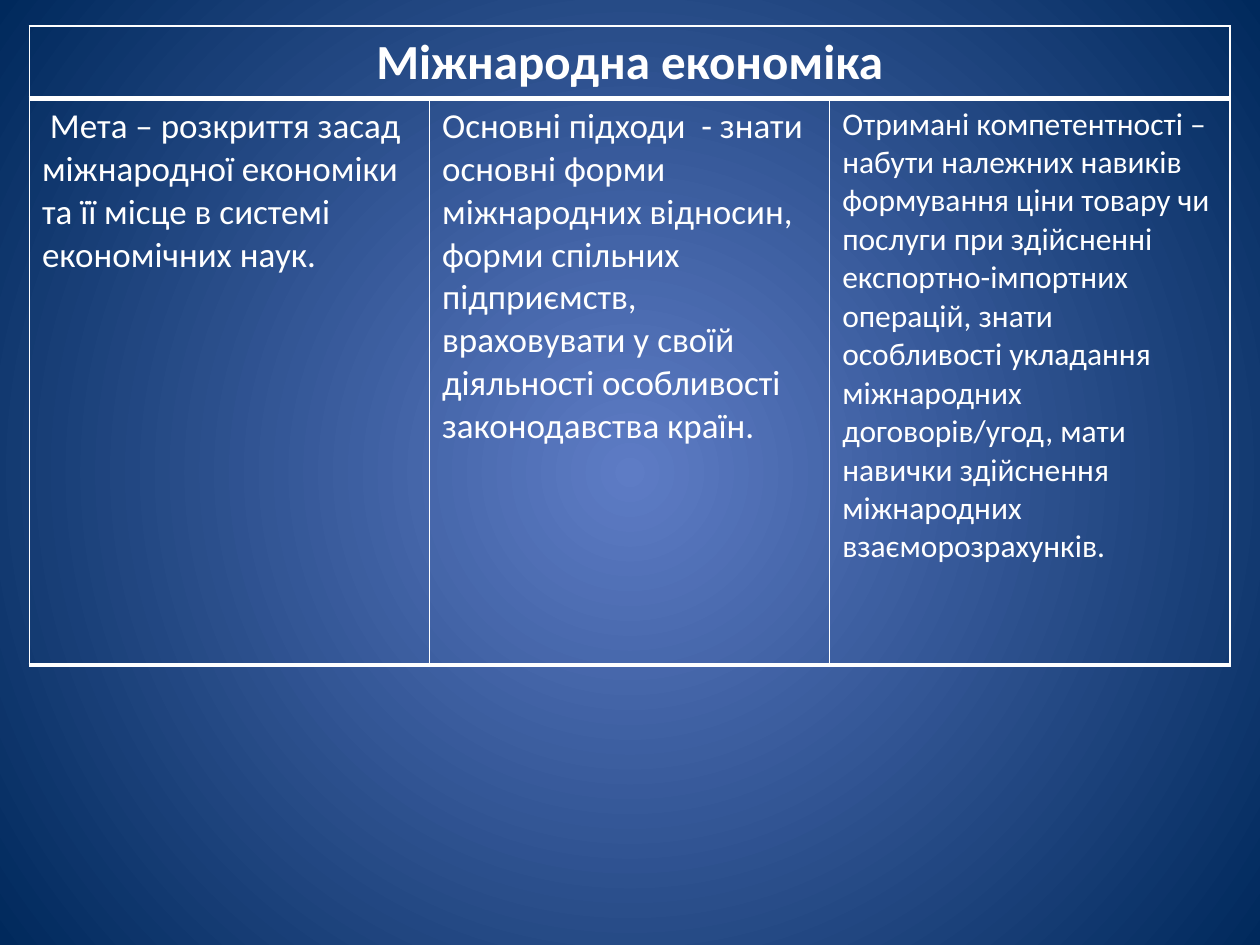
import pptx
import pptx.dml.color
import pptx.enum.text
import pptx.oxml
import pptx.oxml.ns
import pptx.util
from pptx.util import Pt

COLORS = {"text": "FFFFFF", "border": "FFFFFF", "center": "5E7CC5", "edge": "00295C"}
FONT = "Calibri"
THIN, THICK = 1, 3
NAMESPACE = pptx.oxml.ns.nsdecls("a")

HEADING = "Міжнародна економіка"
COLUMNS = [
    (" Мета – розкриття засад міжнародної економіки та її місце в системі "
     "економічних наук.", 20),
    ("Основні підходи  - знати основні форми міжнародних відносин, форми спільних "
     "підприємств, враховувати у своїй діяльності особливості законодавства країн.", 20),
    ("Отримані компетентності – набути належних навиків формування ціни товару чи "
     "послуги при здійсненні експортно-імпортних операцій, знати особливості укладання "
     "міжнародних договорів/угод, мати навички здійснення міжнародних взаєморозрахунків.", 18),
]


def rgb(name):
    return pptx.dml.color.RGBColor.from_string(COLORS[name])


def write_text(cell, text, size, bold=False, align=pptx.enum.text.PP_ALIGN.LEFT):
    paragraph = cell.text_frame.paragraphs[0]
    paragraph.alignment = align
    run = paragraph.add_run()
    run.text = text
    run.font.name = FONT
    run.font.size = Pt(size)
    run.font.bold = bold
    run.font.color.rgb = rgb("text")


def set_borders(cell, top, bottom):
    """Draw thin side borders and the given top and bottom widths, in points."""
    properties = cell._tc.get_or_add_tcPr()
    widths = {"lnL": THIN, "lnR": THIN, "lnT": top, "lnB": bottom}
    for index, (side, width) in enumerate(widths.items()):
        properties.insert(index, pptx.oxml.parse_xml(
            f'<a:{side} {NAMESPACE} w="{Pt(width)}"><a:solidFill>'
            f'<a:srgbClr val="{COLORS["border"]}"/></a:solidFill></a:{side}>'))


def paint_background(slide):
    """Fill the slide with a circular gradient from its center."""
    fill = slide.background.fill
    fill.gradient()
    for stop, name in zip(fill.gradient_stops, ("center", "edge")):
        stop.color.rgb = rgb(name)
    linear = slide.element.xpath(".//p:bg//a:lin")[0]
    linear.getparent().replace(linear, pptx.oxml.parse_xml(
        f'<a:path {NAMESPACE} path="circle">'
        '<a:fillToRect l="50000" t="50000" r="50000" b="50000"/></a:path>'))


def add_course_table(slide, left, top, width, height, heading_height):
    count = len(COLUMNS)
    table = slide.shapes.add_table(
        2, count, Pt(left), Pt(top), Pt(width), Pt(height)).table
    table.first_row = table.horz_banding = False
    table.rows[0].height = Pt(heading_height)
    table.rows[1].height = Pt(height - heading_height)
    for column in table.columns:
        column.width = Pt(width / count)

    for index, (text, size) in enumerate(COLUMNS):
        for row, border_top in enumerate((THIN, THICK)):
            cell = table.cell(row, index)
            cell.fill.background()
            set_borders(cell, border_top, THICK)
        write_text(table.cell(1, index), text, size)

    heading = table.cell(0, 0)
    heading.merge(table.cell(0, count - 1))
    write_text(heading, HEADING, 28, bold=True, align=pptx.enum.text.PP_ALIGN.CENTER)


def main():
    presentation = pptx.Presentation()
    presentation.slide_width = Pt(720)
    presentation.slide_height = Pt(540)
    slide = presentation.slides.add_slide(presentation.slide_layouts[6])
    paint_background(slide)
    add_course_table(slide, left=16.8, top=15, width=686, height=364.5, heading_height=41)
    presentation.save("out.pptx")


if __name__ == "__main__":
    main()
